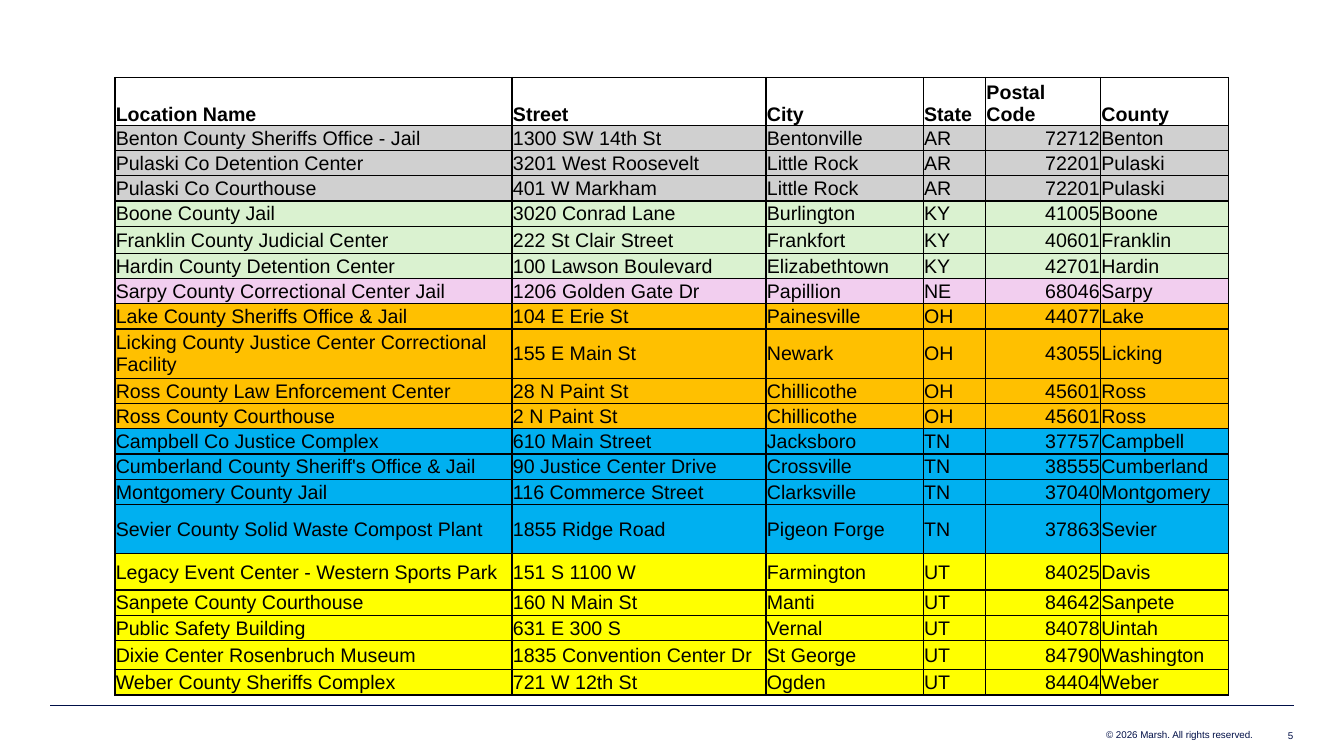
from dataclasses import dataclass, field

from lxml import etree
from pptx import Presentation
from pptx import util as u
from pptx.dml.color import RGBColor
from pptx.enum import shapes, text
from pptx.oxml import ns


@dataclass
class Theme:
    font: str = "Arial"
    table_size: float = 14
    footer_size: float = 7
    ink: str = "000000"
    navy: str = "000F47"
    state_fills: dict = field(default_factory=lambda: {
        "AR": "D0D0D0", "KY": "DAF2D0", "NE": "F2CEEF",
        "OH": "FFC000", "TN": "00B0F0", "UT": "FFFF00",
    })


theme = Theme()

HEADINGS = ("Location Name", "Street", "City", "State", "Postal Code", "County")
LOCATIONS = [
    ("Benton County Sheriffs Office - Jail", "1300 SW 14th St", "Bentonville", "AR", "72712", "Benton"),
    ("Pulaski Co Detention Center", "3201 West Roosevelt", "Little Rock", "AR", "72201", "Pulaski"),
    ("Pulaski Co Courthouse", "401 W Markham", "Little Rock", "AR", "72201", "Pulaski"),
    ("Boone County Jail", "3020 Conrad Lane", "Burlington", "KY", "41005", "Boone"),
    ("Franklin County Judicial Center", "222 St Clair Street", "Frankfort", "KY", "40601", "Franklin"),
    ("Hardin County Detention Center", "100 Lawson Boulevard", "Elizabethtown", "KY", "42701", "Hardin"),
    ("Sarpy County Correctional Center Jail", "1206 Golden Gate Dr", "Papillion", "NE", "68046", "Sarpy"),
    ("Lake County Sheriffs Office & Jail", "104 E Erie St", "Painesville", "OH", "44077", "Lake"),
    ("Licking County Justice Center Correctional Facility", "155 E Main St", "Newark", "OH", "43055", "Licking"),
    ("Ross County Law Enforcement Center", "28 N Paint St", "Chillicothe", "OH", "45601", "Ross"),
    ("Ross County Courthouse", "2 N Paint St", "Chillicothe", "OH", "45601", "Ross"),
    ("Campbell Co Justice Complex", "610 Main Street", "Jacksboro", "TN", "37757", "Campbell"),
    ("Cumberland County Sheriff's Office & Jail", "90 Justice Center Drive", "Crossville", "TN", "38555", "Cumberland"),
    ("Montgomery County Jail", "116 Commerce Street", "Clarksville", "TN", "37040", "Montgomery"),
    ("Sevier County Solid Waste Compost Plant", "1855 Ridge Road", "Pigeon Forge", "TN", "37863", "Sevier"),
    ("Legacy Event Center - Western Sports Park", "151 S 1100 W", "Farmington", "UT", "84025", "Davis"),
    ("Sanpete County Courthouse", "160 N Main St", "Manti", "UT", "84642", "Sanpete"),
    ("Public Safety Building", "631 E 300 S", "Vernal", "UT", "84078", "Uintah"),
    ("Dixie Center Rosenbruch Museum", "1835 Convention Center Dr", "St George", "UT", "84790", "Washington"),
    ("Weber County Sheriffs Complex", "721 W 12th St", "Ogden", "UT", "84404", "Weber"),
]
COLUMN_WIDTHS = (283.7, 181.4, 112.3, 44.6, 82.1, 91.4)
ROW_HEIGHT = 18
SPECIAL_HEIGHTS = {0: 21.6, 5: 19.4, 9: 35.3, 15: 35.3, 16: 25.9, 19: 20.9}
STATE, POSTAL_CODE = HEADINGS.index("State"), HEADINGS.index("Postal Code")


def style_font(font, size, color, bold=False):
    font.name = theme.font
    font.size = u.Pt(size)
    font.bold = bold
    font.color.rgb = RGBColor.from_string(color)


def add_borders(cell):
    """Draw a solid 1 pt line on all four sides; call before filling the cell."""
    properties = cell._tc.get_or_add_tcPr()
    for side in ("lnL", "lnR", "lnT", "lnB"):
        line = etree.SubElement(properties, ns.qn(f"a:{side}"), w=str(u.Pt(1)))
        solid = etree.SubElement(line, ns.qn("a:solidFill"))
        etree.SubElement(solid, ns.qn("a:srgbClr"), val=theme.ink)


deck = Presentation()
deck.slide_width, deck.slide_height = u.Pt(960), u.Pt(540)
page = deck.slides.add_slide(deck.slide_layouts[6])

# Footer
rule = page.shapes.add_connector(
    shapes.MSO_CONNECTOR.STRAIGHT, u.Pt(36), u.Pt(504), u.Pt(924), u.Pt(504))
rule.line.color.rgb = RGBColor.from_string(theme.navy)
rule.line.width = u.Pt(0.5)
etree.SubElement(rule._element.spPr, ns.qn("a:effectLst"))

for label, left, top, width, height, anchor in (
    ("© 2026 Marsh. All rights reserved.", 488.9, 519.8, 406.1, 9.4, text.MSO_ANCHOR.BOTTOM),
    ("5", 895, 521.3, 28.8, 8.6, text.MSO_ANCHOR.MIDDLE),
):
    box = page.shapes.add_textbox(u.Pt(left), u.Pt(top), u.Pt(width), u.Pt(height))
    frame = box.text_frame
    frame.word_wrap = True
    frame.margin_left = frame.margin_right = frame.margin_top = frame.margin_bottom = 0
    frame.vertical_anchor = anchor
    frame.text = label
    para = frame.paragraphs[0]
    para.alignment = text.PP_ALIGN.RIGHT
    style_font(para.runs[0].font, theme.footer_size, theme.navy)

# Locations, coloured by state
rows = [HEADINGS, *LOCATIONS]
heights = [SPECIAL_HEIGHTS.get(index, ROW_HEIGHT) for index in range(len(rows))]
table = page.shapes.add_table(
    len(rows), len(HEADINGS), u.Pt(82.1), u.Pt(55.4),
    u.Pt(sum(COLUMN_WIDTHS)), u.Pt(sum(heights))).table
table.horz_banding = False
for column, width in zip(table.columns, COLUMN_WIDTHS):
    column.width = u.Pt(width)

for row_index, values in enumerate(rows):
    table.rows[row_index].height = u.Pt(heights[row_index])
    is_heading = row_index == 0
    for column_index, value in enumerate(values):
        cell = table.cell(row_index, column_index)
        add_borders(cell)
        if is_heading:
            cell.fill.background()
        else:
            cell.fill.solid()
            cell.fill.fore_color.rgb = RGBColor.from_string(theme.state_fills[values[STATE]])
        cell.margin_left = cell.margin_right = cell.margin_top = u.Pt(0.6)
        cell.margin_bottom = 0
        cell.vertical_anchor = text.MSO_ANCHOR.BOTTOM if is_heading else text.MSO_ANCHOR.MIDDLE
        cell.text_frame.text = value
        para = cell.text_frame.paragraphs[0]
        if column_index == POSTAL_CODE and not is_heading:
            para.alignment = text.PP_ALIGN.RIGHT
        style_font(para.runs[0].font, theme.table_size, theme.ink, bold=is_heading)

deck.save("out.pptx")
